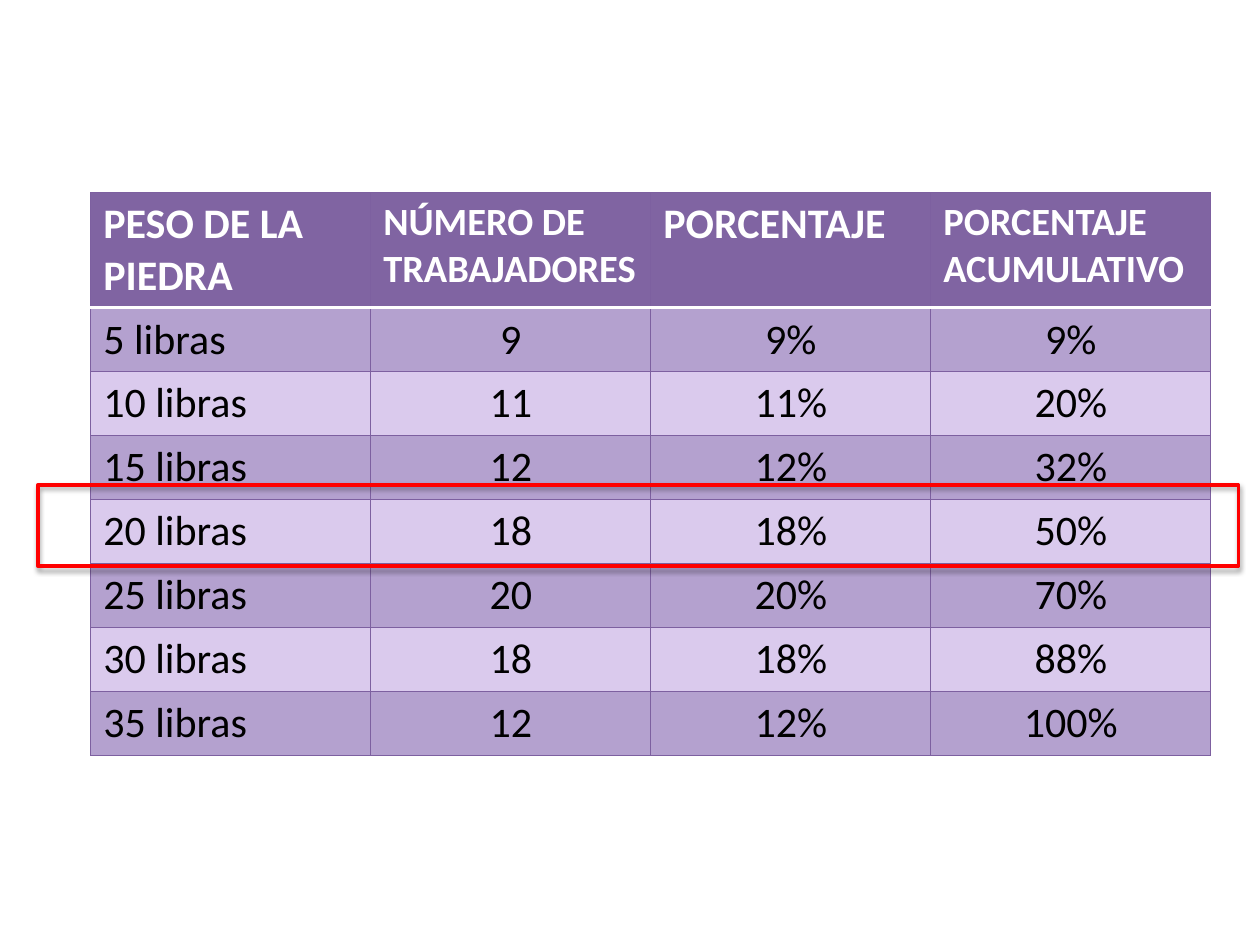
from lxml import etree
from pptx import Presentation
from pptx.dml.color import RGBColor
from pptx.enum.shapes import MSO_SHAPE
from pptx.enum.text import PP_ALIGN
from pptx.oxml.ns import qn
from pptx.util import Inches, Pt

RECT = MSO_SHAPE.RECTANGLE
LEFT, CENTER = PP_ALIGN.LEFT, PP_ALIGN.CENTER

HEADERS = [("PESO DE LA PIEDRA", 24), ("NÚMERO DE TRABAJADORES", 22),
           ("PORCENTAJE", 24), ("PORCENTAJE ACUMULATIVO", 22)]
ROWS = [
    ("5 libras", "9", "9%", "9%"),
    ("10 libras", "11", "11%", "20%"),
    ("15 libras", "12", "12%", "32%"),
    ("20 libras", "18", "18%", "50%"),
    ("25 libras", "20", "20%", "70%"),
    ("30 libras", "18", "18%", "88%"),
    ("35 libras", "12", "12%", "100%"),
]
FONT = "Calibri"
HEADER_FILL, DARK_ROW, LIGHT_ROW = "8064A2", "B4A1CF", "DACAED"
BORDER, WHITE, BLACK, RED = "7D60A0", "FFFFFF", "000000", "FF0000"
HEADER_H, ROW_H = 0.86, 0.5


def rgb(color):
    return RGBColor.from_string(color)


def add_color(parent, color):
    return etree.SubElement(parent, qn("a:srgbClr"), val=color)


def set_border(cell, side, color, width):
    tcPr = cell._tc.get_or_add_tcPr()
    ln = etree.SubElement(tcPr, qn(f"a:ln{side}"), w=str(Pt(width)))
    add_color(etree.SubElement(ln, qn("a:solidFill")), color)


def fill_cell(cell, text, size, color, bold, align, fill, borders):
    for side in "LRTB":
        set_border(cell, side, *borders.get(side, (BORDER, 0.75)))
    cell.fill.solid()
    cell.fill.fore_color.rgb = rgb(fill)
    p = cell.text_frame.paragraphs[0]
    p.alignment = align
    r = p.add_run()
    r.text = text
    r.font.name = FONT
    r.font.size = Pt(size)
    r.font.bold = bold
    r.font.color.rgb = rgb(color)


def add_weights_table(s):
    height = HEADER_H + ROW_H * len(ROWS)
    table = s.shapes.add_table(len(ROWS) + 1, len(HEADERS), Inches(0.72), Inches(1.53),
                               Inches(8.89), Inches(height)).table
    table.rows[0].height = Inches(HEADER_H)
    rule = (WHITE, 2)
    for col, (text, size) in enumerate(HEADERS):
        fill_cell(table.cell(0, col), text, size, WHITE, True, LEFT, HEADER_FILL, {"B": rule})
    for row, values in enumerate(ROWS, 1):
        table.rows[row].height = Inches(ROW_H)
        fill = DARK_ROW if row % 2 else LIGHT_ROW
        borders = {"T": rule} if row == 1 else {}
        for col, text in enumerate(values):
            align = CENTER if col else LEFT
            fill_cell(table.cell(row, col), text, 24, BLACK, False, align, fill, borders)


def add_highlight(s):
    box = s.shapes.add_shape(RECT, Inches(0.3), Inches(3.85), Inches(9.53), Inches(0.64))
    box.fill.background()
    box.line.color.rgb = rgb(RED)
    box.line.width = Pt(2.25)
    box.shadow.inherit = False
    effects = box._element.spPr.find(qn("a:effectLst"))
    shadow = etree.SubElement(effects, qn("a:outerShdw"), blurRad=str(Pt(3.1)),
                              dist=str(Pt(1.8)), dir="5400000", rotWithShape="0")
    etree.SubElement(add_color(shadow, BLACK), qn("a:alpha"), val="35000")


def main():
    prs = Presentation()
    prs.slide_width, prs.slide_height = Inches(10), Inches(7.5)
    s = prs.slides.add_slide(prs.slide_layouts[6])
    add_weights_table(s)
    add_highlight(s)
    prs.save("out.pptx")


if __name__ == "__main__":
    main()
